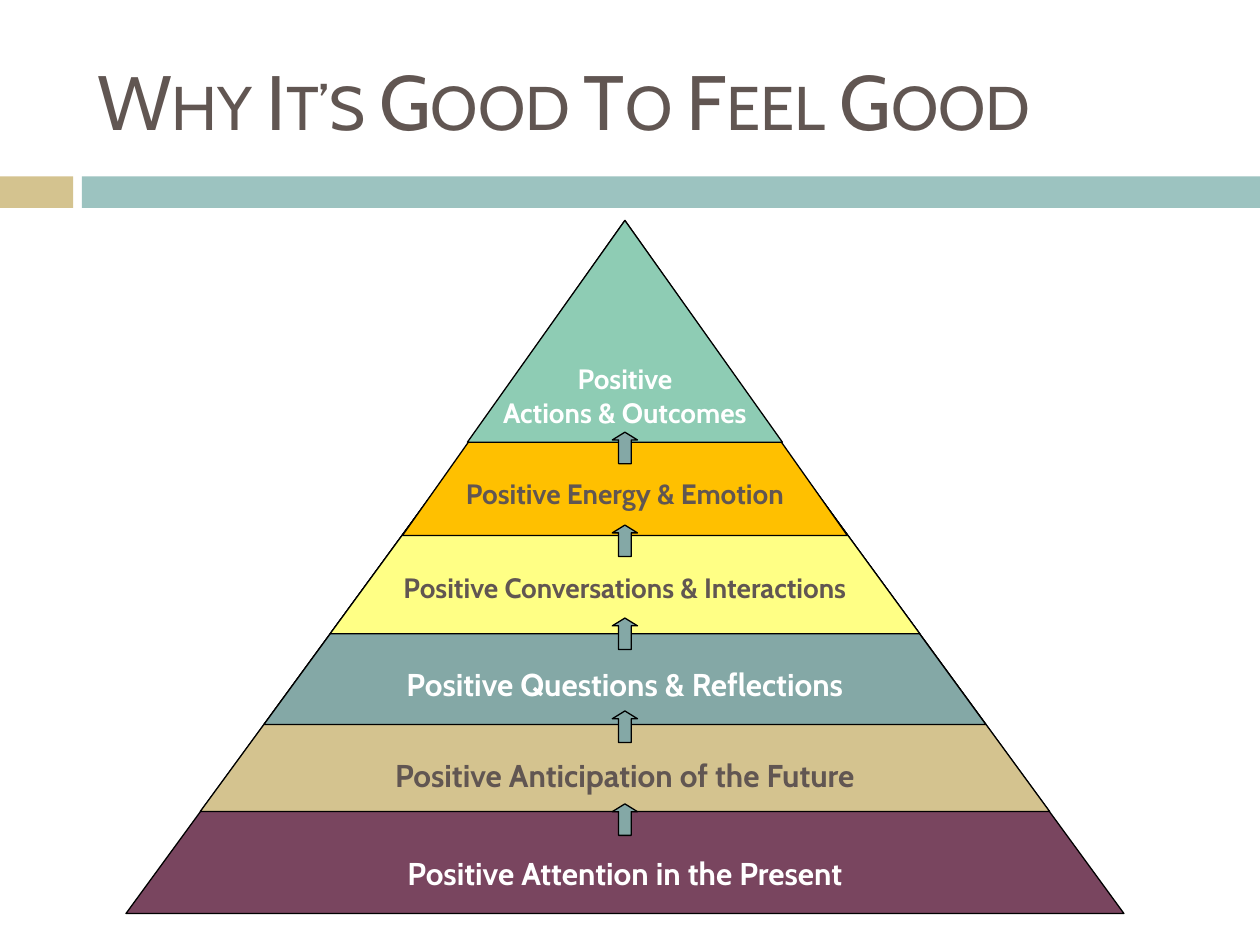
from dataclasses import dataclass

from pptx import Presentation
from pptx.dml.color import RGBColor
from pptx.enum.shapes import MSO_SHAPE
from pptx.enum.text import MSO_ANCHOR, MSO_AUTO_SIZE, PP_ALIGN
from pptx.util import Inches, Pt


@dataclass(frozen=True)
class Theme:
    """Colours, font and type sizes of the slide."""
    font: str = "Cabin"
    title_size: int = 44
    large: int = 18
    medium: int = 16
    outline: str = "000000"
    outline_width: float = 0.75
    ink: str = "615652"
    white: str = "FFFFFF"
    sand: str = "D4C38F"
    aqua: str = "9CC3C0"
    plum: str = "79455F"
    teal: str = "84A8A6"
    lemon: str = "FFFF85"
    amber: str = "FFC000"
    mint: str = "8ECCB4"


def write_text(frame, text, *, font, size, color, bold=False,
               align=PP_ALIGN.LEFT, anchor=MSO_ANCHOR.TOP,
               fit=MSO_AUTO_SIZE.NONE, small_caps=False):
    """Fill a text frame with one formatted paragraph."""
    frame.word_wrap = True
    frame.auto_size = fit
    frame.vertical_anchor = anchor
    paragraph = frame.paragraphs[0]
    paragraph.text = text
    paragraph.alignment = align
    for run in paragraph.runs:
        run.font.name = font
        run.font.size = Pt(size)
        run.font.bold = bold
        run.font.color.rgb = RGBColor.from_string(color)
        if small_caps:
            run._r.get_or_add_rPr().set("cap", "small")


class SlideBuilder:
    """Draw styled elements on the current slide."""

    def __init__(self, slide, theme):
        self.slide = slide
        self.theme = theme

    def title(self, text, left, top, width, height):
        """Place and format the title placeholder."""
        heading = self.slide.shapes.title
        heading.left, heading.top = Inches(left), Inches(top)
        heading.width, heading.height = Inches(width), Inches(height)
        write_text(heading.text_frame, text, font=self.theme.font,
                   size=self.theme.title_size, color=self.theme.ink,
                   anchor=MSO_ANCHOR.MIDDLE, small_caps=True)

    def shape(self, preset, left, top, width, height, fill, outlined=True):
        """Add a flat preset shape."""
        added = self.slide.shapes.add_shape(
            preset, Inches(left), Inches(top), Inches(width), Inches(height))
        added.shadow.inherit = False
        added.fill.solid()
        added.fill.fore_color.rgb = RGBColor.from_string(fill)
        if outlined:
            added.line.color.rgb = RGBColor.from_string(self.theme.outline)
            added.line.width = Pt(self.theme.outline_width)
        else:
            added.line.fill.background()
        return added

    def band(self, left, width, fill):
        """Add a part of the stripe under the title."""
        self.shape(MSO_SHAPE.RECTANGLE, left, 1.4, width, 0.25, fill, outlined=False)

    def level(self, center, top, bottom, width, fill):
        """Add a triangle whose lower edge shows as a pyramid level."""
        self.shape(MSO_SHAPE.ISOSCELES_TRIANGLE, center - width / 2, top,
                   width, bottom - top, fill)

    def label(self, text, center, top, height, size, color):
        """Add a centred level label."""
        width = 5.83
        box = self.slide.shapes.add_textbox(
            Inches(center - width / 2), Inches(top), Inches(width), Inches(height))
        write_text(box.text_frame, text, font=self.theme.font, size=size,
                   color=color, bold=True, align=PP_ALIGN.CENTER,
                   fit=MSO_AUTO_SIZE.SHAPE_TO_FIT_TEXT)

    def arrow(self, center, top):
        """Add a small arrow leading to the next level."""
        width = 0.2
        pointer = self.shape(MSO_SHAPE.UP_ARROW, center - width / 2, top,
                             width, 0.25, self.theme.teal)
        pointer.adjustments[0] = 0.5
        pointer.adjustments[1] = 0.31


def main():
    """Build and save the slide."""
    theme = Theme()
    deck = Presentation()
    deck.slide_width, deck.slide_height = Inches(10), Inches(7.5)
    builder = SlideBuilder(deck.slides.add_slide(deck.slide_layouts[5]), theme)

    builder.band(0, 0.58, theme.sand)
    builder.band(0.65, 9.35, theme.aqua)
    builder.title("Why It’s Good To Feel Good", 0.67, 0.25, 9.33, 1.08)

    center = 4.96
    levels = [
        ("Positive Attention in the Present", 1.83, 7.25, 7.92, theme.plum,
         6.73, 0.4, theme.large, theme.white),
        ("Positive Anticipation of the Future", 1.83, 6.44, 6.74, theme.sand,
         5.95, 0.4, theme.large, theme.ink),
        ("Positive Questions & Reflections", 1.83, 5.75, 5.73, theme.teal,
         5.23, 0.4, theme.large, theme.white),
        ("Positive Conversations & Interactions", 1.83, 5.03, 4.68, theme.lemon,
         4.48, 0.37, theme.medium, theme.ink),
        ("Positive Energy & Emotion", 1.75, 4.25, 3.53, theme.amber,
         3.73, 0.37, theme.medium, theme.ink),
        ("Positive\vActions & Outcomes", 1.75, 3.51, 2.5, theme.mint,
         2.82, 0.64, theme.medium, theme.white),
    ]
    for _, apex, base, width, fill, *_ in levels:
        builder.level(center, apex, base, width, fill)
    for text, *_, label_top, label_height, size, color in levels:
        builder.label(text, center, label_top, label_height, size, color)

    lowest_arrow, highest_arrow = 6.38, 3.43
    steps = len(levels) - 1
    pitch = (lowest_arrow - highest_arrow) / (steps - 1)
    for step in range(steps):
        builder.arrow(center, lowest_arrow - step * pitch)

    deck.save("out.pptx")


if __name__ == "__main__":
    main()
